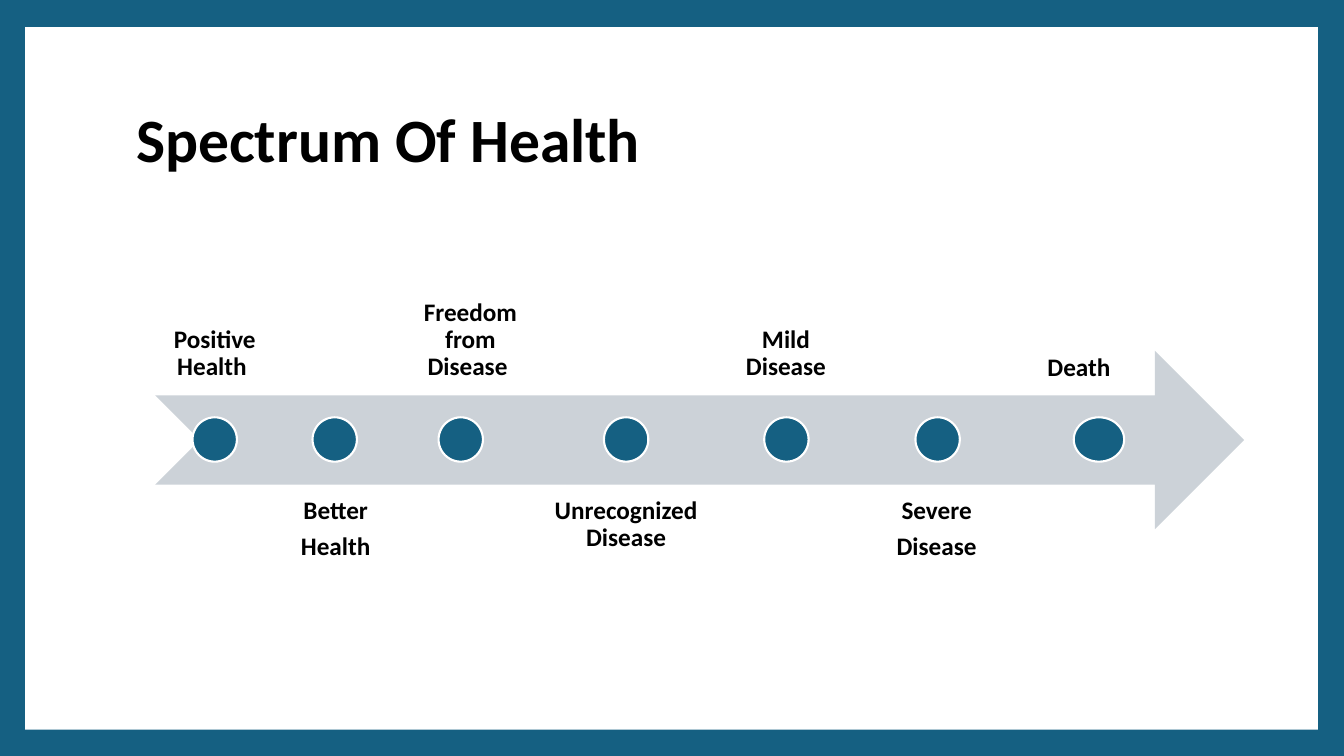
from pptx import Presentation
from pptx.dml.color import RGBColor
from pptx.enum.shapes import MSO_SHAPE as Shape
from pptx.enum.text import MSO_ANCHOR as Anchor, MSO_AUTO_SIZE as AutoSize, PP_ALIGN as Align
from pptx.util import Inches, Pt

TEAL, WHITE, BLACK, GREY = "156082", "FFFFFF", "000000", "CCD2D8"


def add_filled(kind, left, top, width, height, fill, outline=None):
    """Add a flat preset shape, outlined only if a colour is given."""
    shape = slide.shapes.add_shape(
        kind, Inches(left), Inches(top), Inches(width), Inches(height))
    shape.shadow.inherit = False
    shape.fill.solid()
    shape.fill.fore_color.rgb = RGBColor.from_string(fill)
    if outline:
        shape.line.color.rgb = RGBColor.from_string(outline)
        shape.line.width = Pt(1.5)
    else:
        shape.line.fill.background()
    return shape


def style_paragraph(paragraph, size, align):
    paragraph.alignment = align
    paragraph.line_spacing = 0.9
    font = paragraph.font
    font.name, font.size, font.bold = "Calibri", Pt(size), True
    font.color.rgb = RGBColor.from_string(BLACK)


prs = Presentation()
prs.slide_width, prs.slide_height = Inches(13.33), Inches(7.5)
slide = prs.slides.add_slide(prs.slide_layouts[5])
slide.background.fill.solid()
slide.background.fill.fore_color.rgb = RGBColor.from_string(TEAL)

title = slide.shapes.title
title.left, title.top = Inches(1.25), Inches(0.67)
title.width, title.height = Inches(10.8), Inches(1.48)
title.text_frame.text = "Spectrum Of Health"
title.text_frame.auto_size = AutoSize.NONE
title.text_frame.vertical_anchor = Anchor.MIDDLE
style_paragraph(title.text_frame.paragraphs[0], 44, Align.LEFT)

# The white panel lies behind the title
panel = add_filled(Shape.RECTANGLE, 0.25, 0.27, 12.82, 6.97, WHITE)
title._element.addprevious(panel._element)

add_filled(Shape.NOTCHED_RIGHT_ARROW, 1.54, 3.48, 10.8, 1.77, GREY)

# Stage label, label left, label width, dot left, dot width
stages = [
    ("Positive Health ", 1.54, 1.18, 1.91, 0.44),
    ("Better\n Health ", 2.75, 1.16, 3.1, 0.44),
    ("Freedom from Disease ", 4.02, 1.29, 4.35, 0.44),
    ("Unrecognized Disease", 5.24, 1.94, 5.99, 0.44),
    ("Mild Disease", 7.2, 1.19, 7.58, 0.44),
    ("Severe\nDisease", 8.41, 1.76, 9.08, 0.44),
    ("Death ", 10.2, 1.06, 10.65, 0.5),
]
for index, (stage, label_left, label_width, dot_left, dot_width) in enumerate(stages):
    above = index % 2 == 0
    label = slide.shapes.add_textbox(
        Inches(label_left), Inches(2.15 if above else 4.8),
        Inches(label_width), Inches(1.77)).text_frame
    label.word_wrap = True
    label.vertical_anchor = Anchor.BOTTOM if above else Anchor.TOP
    label.margin_left = label.margin_right = Inches(0.14)
    label.margin_top = label.margin_bottom = Inches(0.14)
    label.text = stage
    for paragraph in label.paragraphs:
        style_paragraph(paragraph, 18, Align.CENTER)
        paragraph.space_after = Pt(6.3)
    add_filled(Shape.OVAL, dot_left, 4.14, dot_width, 0.44, TEAL, WHITE)

prs.save("out.pptx")
